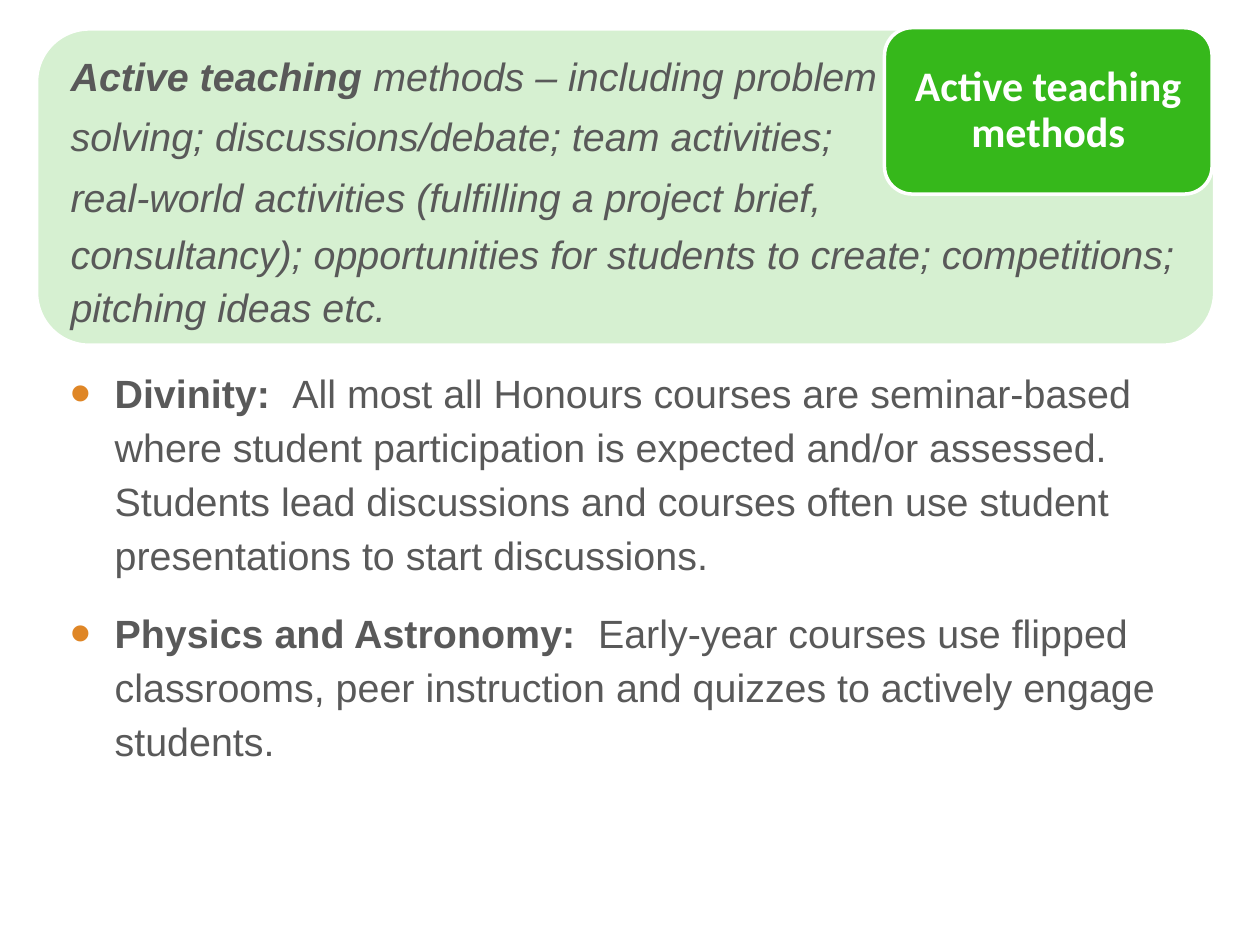
from dataclasses import dataclass

from lxml import etree
from pptx import Presentation
from pptx.dml.color import RGBColor
from pptx.enum.shapes import MSO_SHAPE
from pptx.enum.text import MSO_ANCHOR, PP_ALIGN
from pptx.oxml.ns import qn
from pptx.util import Emu, Pt

ROUNDED = MSO_SHAPE.ROUNDED_RECTANGLE
MIDDLE, TOP = MSO_ANCHOR.MIDDLE, MSO_ANCHOR.TOP
CENTER, LEFT = PP_ALIGN.CENTER, PP_ALIGN.LEFT

PX = 9144
GREEN, WHITE, GREY, ORANGE = "36B81B", "FFFFFF", "595959", "DF8626"


@dataclass(frozen=True)
class Box:
    left: int
    top: int
    width: int
    height: int

    def emu(self) -> list[Emu]:
        return [px(n) for n in (self.left, self.top, self.width, self.height)]


@dataclass(frozen=True)
class Passage:
    lead: str
    body: str
    italic: bool = False
    bullet: bool = False
    spacing: float | Pt = 1.14


def px(length: int) -> Emu:
    return Emu(length * PX)


def color(value: str) -> RGBColor:
    return RGBColor.from_string(value)


def set_frame(frame, inset: int, anchor) -> None:
    frame.word_wrap = True
    frame.vertical_anchor = anchor
    frame.margin_left = frame.margin_right = px(inset)
    frame.margin_top = frame.margin_bottom = px(inset)


def style_run(run, font: str, size: float, fill: str, bold: bool, italic: bool = False) -> None:
    run.font.name = font
    run.font.size = Pt(size)
    run.font.color.rgb = color(fill)
    run.font.bold = bold
    run.font.italic = italic


def add_panel(slide, box: Box, opacity: int = 100):
    panel = slide.shapes.add_shape(ROUNDED, *box.emu())
    panel.shadow.inherit = False
    panel.fill.solid()
    panel.fill.fore_color.rgb = color(GREEN)
    panel.line.color.rgb = color(WHITE)
    panel.line.width = Pt(2)
    if opacity < 100:
        tint = panel._element.spPr.find(qn("a:solidFill"))[0]
        etree.SubElement(tint, qn("a:alpha"), val=str(opacity * 1000))
    return panel


def add_bullet(properties) -> None:
    bullet_color = etree.SubElement(properties, qn("a:buClr"))
    etree.SubElement(bullet_color, qn("a:srgbClr"), val=ORANGE)
    etree.SubElement(properties, qn("a:buSzPct"), val="150000")
    etree.SubElement(properties, qn("a:buFont"), typeface="Arial")
    etree.SubElement(properties, qn("a:buChar"), char="•")


def add_passages(slide, box: Box, passages: list[Passage]) -> None:
    frame = slide.shapes.add_textbox(*box.emu()).text_frame
    set_frame(frame, 7, TOP)
    for index, passage in enumerate(passages):
        paragraph = frame.add_paragraph() if index else frame.paragraphs[0]
        paragraph.alignment = LEFT
        paragraph.line_spacing = passage.spacing
        paragraph.space_before = Pt(14)
        properties = paragraph._p.get_or_add_pPr()
        properties.set("marL", str(px(55 if passage.bullet else 20)))
        properties.set("indent", str(px(-35 if passage.bullet else 0)))
        if passage.bullet:
            add_bullet(properties)
        for text, bold in ((passage.lead, True), (passage.body, False)):
            if text:
                run = paragraph.add_run()
                run.text = text
                style_run(run, "Arial", 22.5, GREY, bold, passage.italic)


def add_label(slide, box: Box, text: str) -> None:
    frame = add_panel(slide, box).text_frame
    set_frame(frame, 13, MIDDLE)
    frame.text = text
    paragraph = frame.paragraphs[0]
    paragraph.alignment = CENTER
    paragraph.line_spacing = 0.9
    style_run(paragraph.runs[0], "Calibri", 24, WHITE, True)


DEFINITION_START = Passage(
    "Active teaching",
    " methods – including problem solving; discussions/debate; team activities; "
    "real-world activities (fulfilling a project brief,",
    italic=True,
    spacing=Pt(34.5),
)
DEFINITION_END = Passage(
    "",
    "consultancy); opportunities for students to create; competitions; pitching ideas etc.",
    italic=True,
)
EXAMPLES = [
    Passage(
        "Divinity:  ",
        "All most all Honours courses are seminar-based where student participation is "
        "expected and/or assessed. Students lead discussions and courses often use "
        "student presentations to start discussions.",
        bullet=True,
    ),
    Passage(
        "Physics and Astronomy:  ",
        "Early-year courses use flipped classrooms, peer instruction and quizzes to "
        "actively engage students.",
        bullet=True,
    ),
]


def main() -> None:
    deck = Presentation()
    deck.slide_width, deck.slide_height = px(1000), px(750)
    slide = deck.slides.add_slide(deck.slide_layouts[6])
    add_panel(slide, Box(29, 23, 935, 251), opacity=20)
    add_passages(slide, Box(29, 24, 682, 132), [DEFINITION_START])
    add_passages(slide, Box(29, 281, 944, 370), EXAMPLES)
    add_label(slide, Box(702, 22, 260, 132), "Active teaching methods")
    add_passages(slide, Box(29, 170, 931, 132), [DEFINITION_END])
    deck.save("out.pptx")


if __name__ == "__main__":
    main()
